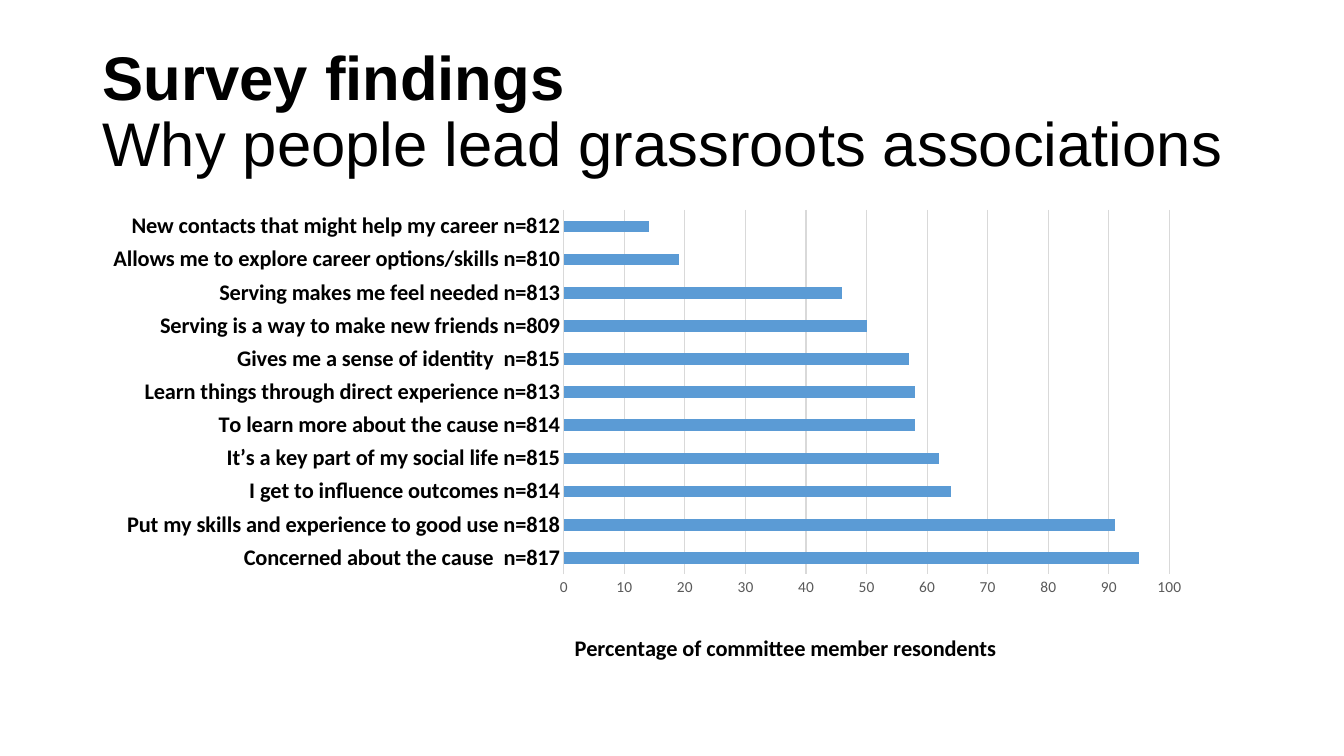
from dataclasses import dataclass

from lxml import etree
from pptx import Presentation
from pptx.chart.data import CategoryChartData
from pptx.dml.color import RGBColor
from pptx.enum.chart import XL_CHART_TYPE as ChartType, XL_TICK_MARK as TickMark
from pptx.enum.text import MSO_ANCHOR as Anchor
from pptx.oxml.ns import qn
from pptx.util import Inches, Pt


@dataclass(frozen=True)
class Theme:
    ink: RGBColor = RGBColor(0x00, 0x00, 0x00)
    muted: RGBColor = RGBColor(0x59, 0x59, 0x59)
    rule: RGBColor = RGBColor(0xD9, 0xD9, 0xD9)
    bar: RGBColor = RGBColor(0x5B, 0x9B, 0xD5)
    heading_font: str = "Arial"
    chart_font: str = "Calibri"
    heading_size: Pt = Pt(44)
    label_size: Pt = Pt(16)
    tick_size: Pt = Pt(11)
    rule_width: Pt = Pt(0.75)


@dataclass(frozen=True)
class Reason:
    label: str
    percent: int


THEME = Theme()
REASONS = [
    Reason("Concerned about the cause  n=817", 95),
    Reason("Put my skills and experience to good use n=818", 91),
    Reason("I get to influence outcomes n=814", 64),
    Reason("It’s a key part of my social life n=815", 62),
    Reason("To learn more about the cause n=814", 58),
    Reason("Learn things through direct experience n=813", 58),
    Reason("Gives me a sense of identity  n=815", 57),
    Reason("Serving is a way to make new friends n=809", 50),
    Reason("Serving makes me feel needed n=813", 46),
    Reason("Allows me to explore career options/skills n=810", 19),
    Reason("New contacts that might help my career n=812", 14),
]


def style_font(font, name: str, size: Pt, color: RGBColor, bold: bool = False) -> None:
    font.name, font.size, font.bold = name, size, bold
    font.color.rgb = color


def style_rule(line) -> None:
    line.color.rgb = THEME.rule
    line.width = THEME.rule_width


def place(parent, follower, **settings: object) -> None:
    """Give a chart part a manual layout, as fractions of the chart."""
    for old in parent.findall(qn("c:layout")):
        parent.remove(old)
    layout = etree.Element(qn("c:layout"))
    manual = etree.SubElement(layout, qn("c:manualLayout"))
    for tag, value in settings.items():
        etree.SubElement(manual, qn(f"c:{tag}")).set("val", str(value))
    follower.addprevious(layout)


def add_heading(slide) -> None:
    heading = slide.shapes.add_textbox(Inches(0.92), Inches(0.4), Inches(11.5), Inches(1.45))
    frame = heading.text_frame
    frame.word_wrap = True
    frame.vertical_anchor = Anchor.MIDDLE
    frame.text = "Survey findings\vWhy people lead grassroots associations"
    paragraph = frame.paragraphs[0]
    paragraph.line_spacing = 0.9
    for run, bold in zip(paragraph.runs, (True, False)):
        style_font(run.font, THEME.heading_font, THEME.heading_size, THEME.ink, bold)


def add_reasons_chart(slide) -> None:
    data = CategoryChartData()
    data.categories = [reason.label for reason in REASONS]
    data.add_series("Series 1", [reason.percent for reason in REASONS])
    chart = slide.shapes.add_chart(ChartType.BAR_CLUSTERED, Inches(0.92), Inches(2),
                                   Inches(11.02), Inches(4.64), data).chart
    chart.has_legend = False
    chart.has_title = False
    style_font(chart.font, THEME.chart_font, THEME.tick_size, THEME.ink)

    # Bars
    plot = chart.plots[0]
    plot.gap_width = 182
    plot.vary_by_categories = False
    bars = plot.series[0].format.fill
    bars.solid()
    bars.fore_color.rgb = THEME.bar

    # Reasons axis
    reasons = chart.category_axis
    reasons.major_tick_mark = reasons.minor_tick_mark = TickMark.NONE
    style_rule(reasons.format.line)
    style_font(reasons.tick_labels.font, THEME.chart_font, THEME.label_size, THEME.ink, True)

    # Percentage axis
    percent = chart.value_axis
    percent.minimum_scale, percent.maximum_scale, percent.major_unit = 0, 100, 10
    percent.major_tick_mark = percent.minor_tick_mark = TickMark.NONE
    percent.format.line.fill.background()
    style_rule(percent.major_gridlines.format.line)
    style_font(percent.tick_labels.font, THEME.chart_font, THEME.tick_size, THEME.muted)
    caption = percent.axis_title
    caption.text_frame.text = "Percentage of committee member resondents"
    style_font(caption.text_frame.paragraphs[0].runs[0].font,
               THEME.chart_font, THEME.label_size, THEME.ink, True)

    # Positions of the caption and the plot
    title = caption._element
    place(title, title.find(qn("c:overlay")), xMode="edge", yMode="edge", x=0.43, y=0.92)
    area = chart._chartSpace.chart.plotArea
    place(area, area.find(qn("c:barChart")), layoutTarget="inner", xMode="edge",
          yMode="edge", x=0.424, y=0.018, w=0.545, h=0.785)


def main() -> None:
    deck = Presentation()
    deck.slide_width, deck.slide_height = Inches(13.33), Inches(7.5)
    slide = deck.slides.add_slide(deck.slide_layouts[6])
    add_heading(slide)
    add_reasons_chart(slide)
    deck.save("out.pptx")


if __name__ == "__main__":
    main()
